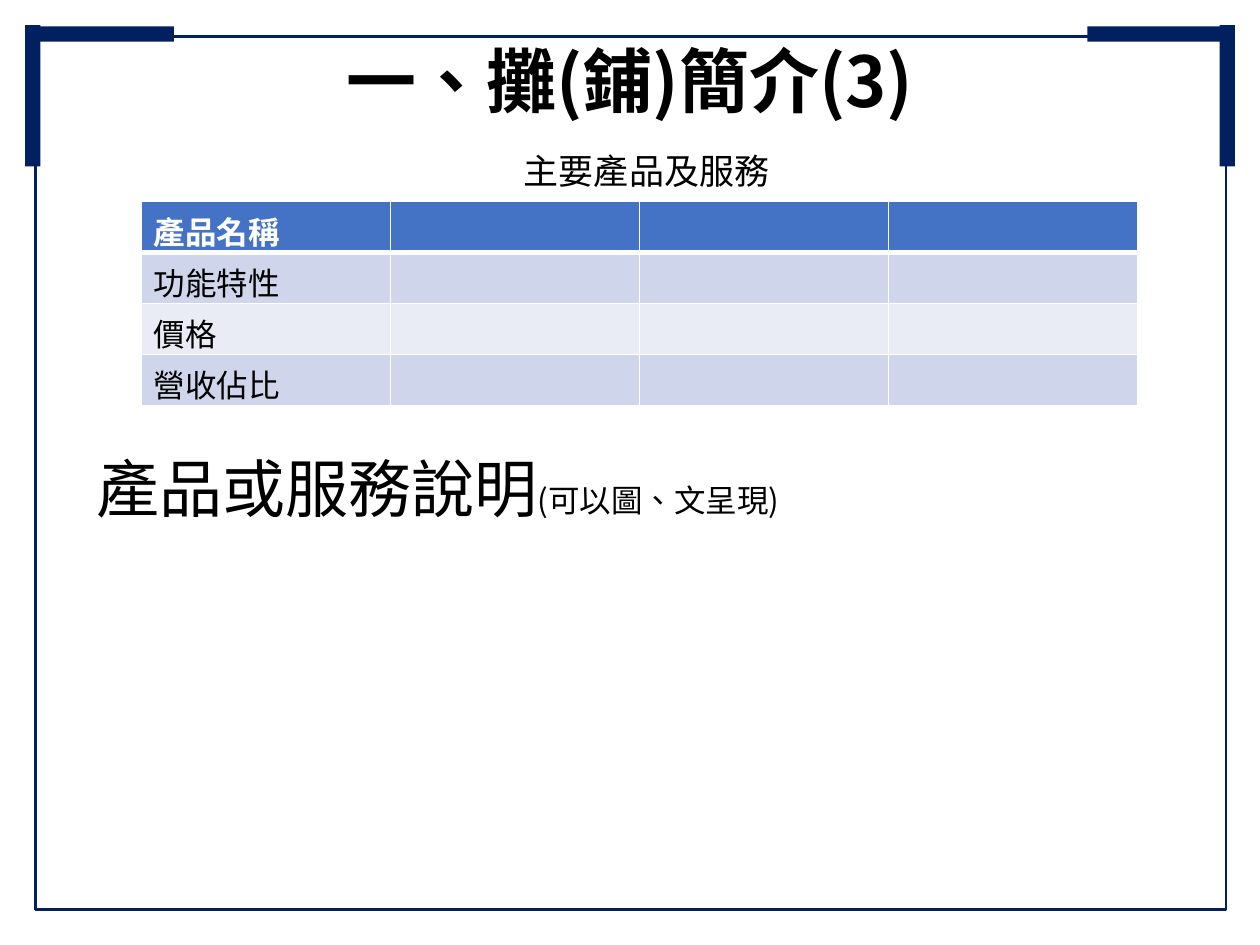
import pptx
import pptx.util
import pptx.dml.color
import pptx.enum.lang
import pptx.enum.shapes
import pptx.enum.text
from lxml import etree

Inches, Pt = pptx.util.Inches, pptx.util.Pt
ALIGN, ANCHOR = pptx.enum.text.PP_ALIGN, pptx.enum.text.MSO_ANCHOR
RECT = pptx.enum.shapes.MSO_SHAPE.RECTANGLE

FONT = "Noto Sans CJK SC"
COLORS = {"frame": "002060", "text": "000000", "white": "FFFFFF",
          "header": "4472C4", "odd": "CFD5EA", "even": "E9EBF5"}

TITLE = "一、攤(鋪)簡介(3)"
CAPTION = "主要產品及服務"
ROW_LABELS = ["產品名稱", "功能特性", "價格", "營收佔比"]
DESCRIPTION = [("產品或服務說明", 36), ("(可以圖、文呈現)", 18)]

TABLE_COLS = 4
TABLE_BOX = (1.12, 1.6, 7.91, 1.62)
BAR_LENGTH, BAR_THICKNESS = 1.12, 0.12
# left, top, rotation
CORNER_BARS = [(0.26, 0.21, 0), (-0.3, 0.7, 270), (8.63, 0.21, 0), (9.18, 0.7, 90)]


def rgb(name):
    return pptx.dml.color.RGBColor.from_string(COLORS[name])


def inches(*values):
    return [Inches(v) for v in values]


def add_run(p, text, size, color="text", bold=False):
    r = p.add_run()
    r.text = text
    r.font.size = Pt(size)
    r.font.bold = bold
    r.font.color.rgb = rgb(color)
    r.font.name = FONT
    r.font.language_id = pptx.enum.lang.MSO_LANGUAGE_ID.TRADITIONAL_CHINESE
    ea = etree.SubElement(r.font._element, pptx.oxml.ns.qn("a:ea"))
    ea.set("typeface", FONT)


def add_text_box(slide, box, runs, anchor):
    tf = slide.shapes.add_textbox(*inches(*box)).text_frame
    tf.word_wrap = True
    tf.vertical_anchor = anchor
    for text, size in runs:
        add_run(tf.paragraphs[0], text, size)


def set_border(cell, side, width):
    qn = pptx.oxml.ns.qn
    ln = etree.SubElement(cell._tc.get_or_add_tcPr(), qn("a:ln" + side), w=str(Pt(width)))
    fill = etree.SubElement(ln, qn("a:solidFill"))
    etree.SubElement(fill, qn("a:srgbClr"), val=COLORS["white"])


def add_frame(slide):
    sp = slide.shapes.add_shape(RECT, *inches(0.28, 0.29, 9.45, 6.93))
    sp.shadow.inherit = False
    sp.fill.background()
    sp.line.color.rgb = rgb("frame")
    sp.line.width = Pt(1.5)
    for left, top, rotation in CORNER_BARS:
        sp = slide.shapes.add_shape(RECT, *inches(left, top, BAR_LENGTH, BAR_THICKNESS))
        sp.rotation = rotation
        sp.shadow.inherit = False
        sp.fill.solid()
        sp.fill.fore_color.rgb = rgb("frame")
        sp.line.fill.background()


def add_product_table(slide):
    table = slide.shapes.add_table(len(ROW_LABELS), TABLE_COLS, *inches(*TABLE_BOX)).table
    for i, label in enumerate(ROW_LABELS):
        header = i == 0
        band = "header" if header else ("odd" if i % 2 else "even")
        for j in range(TABLE_COLS):
            cell = table.cell(i, j)
            for side in "LRTB":
                thick = (header and side == "B") or (i == 1 and side == "T")
                set_border(cell, side, 3 if thick else 1)
            cell.fill.solid()
            cell.fill.fore_color.rgb = rgb(band)
            p = cell.text_frame.paragraphs[0]
            p.font.size = Pt(18)
            if j == 0:
                add_run(p, label, 18, "white" if header else "text", header)


def main():
    prs = pptx.Presentation()
    prs.slide_width, prs.slide_height = inches(10, 7.5)
    slide = prs.slides.add_slide(prs.slide_layouts[5])
    add_frame(slide)

    title = slide.shapes.title
    title.left, title.top, title.width, title.height = inches(0.5, 0.13, 9, 1.01)
    tf = title.text_frame
    tf.vertical_anchor = ANCHOR.MIDDLE
    tf.paragraphs[0].alignment = ALIGN.CENTER
    add_run(tf.paragraphs[0], TITLE, 40, bold=True)

    add_text_box(slide, (4.06, 1.14, 5, 0.44), [(CAPTION, 20)], ANCHOR.TOP)
    add_product_table(slide)
    add_text_box(slide, (0.67, 3.51, 9, 0.71), DESCRIPTION, ANCHOR.MIDDLE)
    prs.save("out.pptx")


if __name__ == "__main__":
    main()
